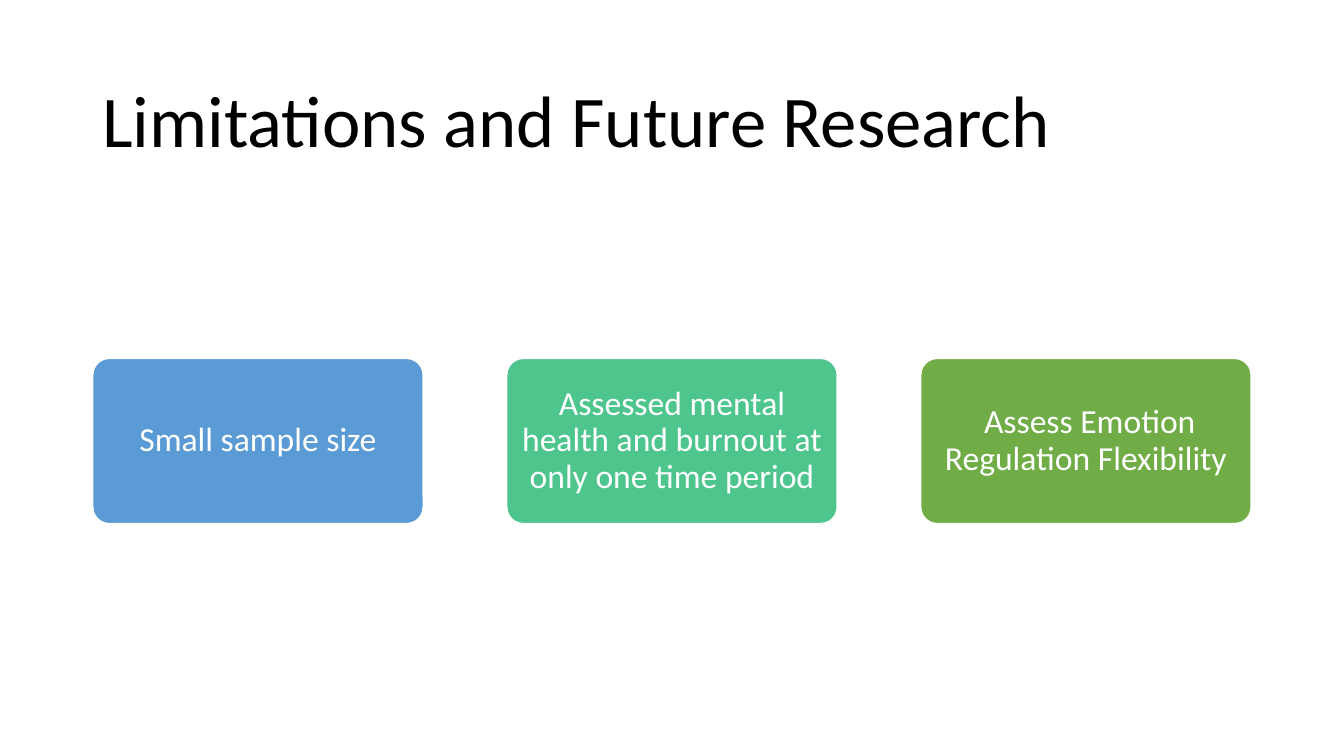
from pptx import Presentation
from pptx import util as u
from pptx.dml.color import RGBColor
from pptx.enum import shapes, text

Pt = u.Pt


def rgb(value):
    return RGBColor.from_string(value)


def write(sp, words, size, color, align, margins):
    """Set one vertically centred paragraph in a shape."""
    tf = sp.text_frame
    frame_format = {"word_wrap": True, "vertical_anchor": text.MSO_ANCHOR.MIDDLE}
    frame_format.update(margins)
    for name, value in frame_format.items():
        setattr(tf, name, value)
    p = tf.paragraphs[0]
    p.alignment = align
    p.line_spacing = 0.9
    r = p.add_run()
    r.text = words
    for name, value in {"name": "Calibri", "size": Pt(size)}.items():
        setattr(r.font, name, value)
    r.font.color.rgb = rgb(color)


prs = Presentation()
prs.slide_width, prs.slide_height = Pt(960), Pt(540)
s = prs.slides.add_slide(prs.slide_layouts[6])

# Title
title = s.shapes.add_textbox(Pt(66), Pt(44), Pt(828), Pt(89.5))
write(title, "Limitations and Future Research", 52, "000000", text.PP_ALIGN.LEFT, {})

# Row of cards
cards = [
    ("Small sample size", "5B9BD5"),
    ("Assessed mental health and burnout at only one time period", "4DC58D"),
    (" Assess Emotion Regulation Flexibility", "70AD47"),
]
left, top, width, height, step = 66.3, 256, 236, 118, 295.7
card_margins = {
    "margin_left": Pt(3.6), "margin_right": Pt(3.6),
    "margin_top": Pt(2.4), "margin_bottom": Pt(2.4),
}
for i, (words, fill) in enumerate(cards):
    sp = s.shapes.add_shape(shapes.MSO_SHAPE.ROUNDED_RECTANGLE,
                            Pt(left + i * step), Pt(top), Pt(width), Pt(height))
    sp.adjustments[0] = 0.1
    sp.shadow.inherit = False
    sp.fill.solid()
    sp.fill.fore_color.rgb = rgb(fill)
    sp.line.color.rgb = rgb("FFFFFF")
    sp.line.width = Pt(1)
    write(sp, words, 24, "FFFFFF", text.PP_ALIGN.CENTER, card_margins)

prs.save("out.pptx")
